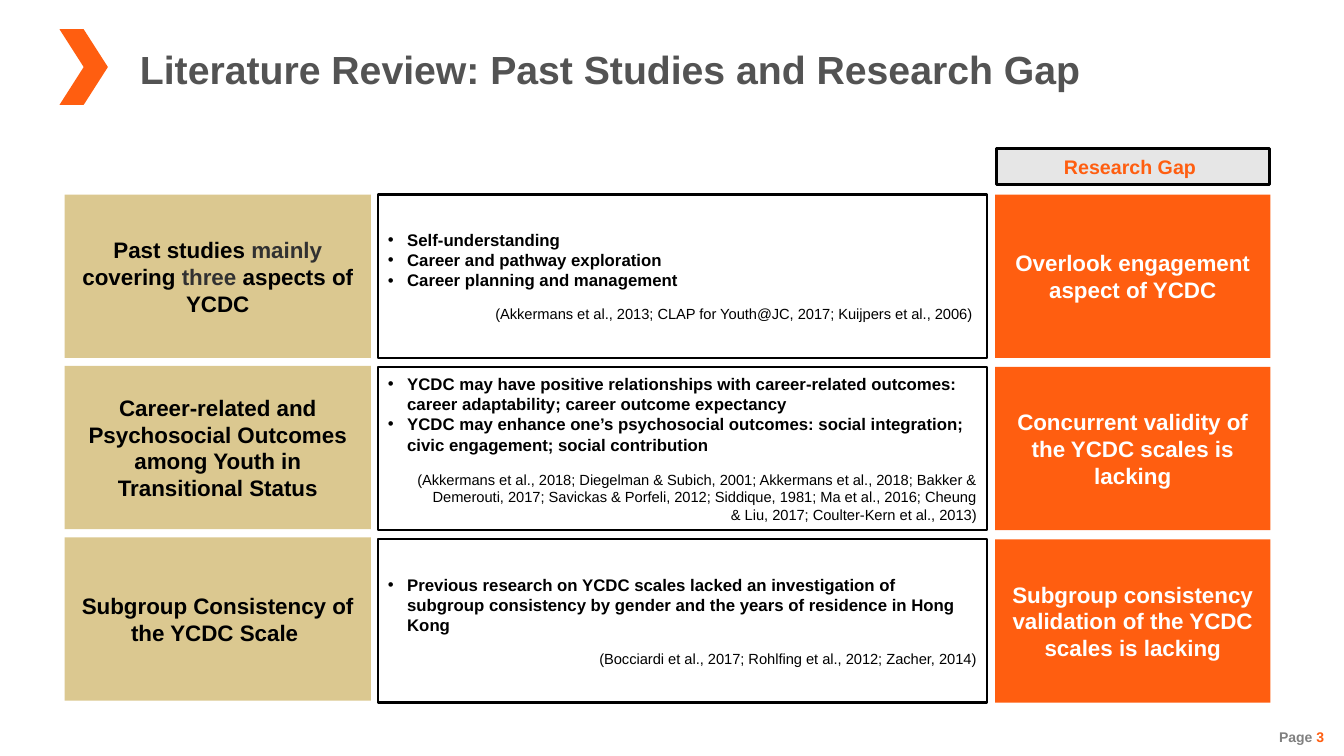
from lxml import etree
from pptx import Presentation
from pptx.dml.color import RGBColor
from pptx.enum.shapes import MSO_SHAPE
from pptx.enum.text import MSO_ANCHOR, PP_ALIGN
from pptx.oxml.ns import qn
from pptx.util import Inches, Pt

LEFT, CENTER, RIGHT = PP_ALIGN.LEFT, PP_ALIGN.CENTER, PP_ALIGN.RIGHT
MIDDLE = MSO_ANCHOR.MIDDLE
RECTANGLE, CHEVRON = MSO_SHAPE.RECTANGLE, MSO_SHAPE.CHEVRON

COLORS = {
    "orange": "FF5E10", "tan": "DBC890", "light": "E6E6E6", "white": "FFFFFF",
    "black": "000000", "charcoal": "313131", "title": "535353", "gray": "808080",
}


def add_text(box, text, size=12, color="black", bold=True, align=LEFT,
             before=0, indent=0, hanging=0, bullet=False):
    """Add a paragraph; text is a string or a list of (text, color) spans."""
    frame = box.text_frame
    para = frame.paragraphs[0]
    if para.runs:
        para = frame.add_paragraph()
        para.space_before = Pt(before)
    para.alignment = align
    properties = para._p.get_or_add_pPr()
    properties.set("marL", str(Inches(indent)))
    properties.set("indent", str(-Inches(hanging)))
    if bullet:
        etree.SubElement(properties, qn("a:buFont"), typeface="Arial")
        etree.SubElement(properties, qn("a:buChar"), char="•")
    spans = [(text, color)] if isinstance(text, str) else text
    for words, span_color in spans:
        span = para.add_run()
        span.text = words
        span.font.name = "Arial"
        span.font.size = Pt(size)
        span.font.bold = bold
        span.font.color.rgb = RGBColor.from_string(COLORS[span_color])


def add_box(left, top, width, height, fill=None, line=None, kind=RECTANGLE):
    """Add a preset shape with even insets and middle-anchored text."""
    box = page.shapes.add_shape(
        kind, Inches(left), Inches(top), Inches(width), Inches(height))
    box.shadow.inherit = False
    if fill:
        box.fill.solid()
        box.fill.fore_color.rgb = RGBColor.from_string(COLORS[fill])
    else:
        box.fill.background()
    if line:
        box.line.color.rgb = RGBColor.from_string(COLORS["black"])
        box.line.width = Pt(line)
    else:
        box.line.fill.background()
    frame = box.text_frame
    frame.word_wrap = True
    frame.vertical_anchor = MIDDLE
    frame.margin_left = frame.margin_right = Inches(0.1)
    frame.margin_top = frame.margin_bottom = Inches(0.1)
    return box


deck = Presentation()
deck.slide_width, deck.slide_height = Inches(13.33), Inches(7.5)
page = deck.slides.add_slide(deck.slide_layouts[6])

# Title and page number
title = page.shapes.add_textbox(Inches(1.29), Inches(0.4), Inches(9.64), Inches(0.57))
title.text_frame.word_wrap = False
add_text(title, "Literature Review: Past Studies and Research Gap", size=28, color="title")
add_box(0.59, 0.29, 0.48, 0.75, fill="orange", kind=CHEVRON)

number = page.shapes.add_textbox(Inches(12.58), Inches(7.18), Inches(0.65), Inches(0.27))
number.text_frame.word_wrap = False
add_text(number, [("Page ", "gray"), ("3", "orange")], size=10, align=RIGHT)

# Rows: topic, findings, citation with its format, research gap
rows = [
    ([("Past studies ", "black"), ("mainly ", "charcoal"), ("covering", "black"),
      (" three ", "charcoal"), ("aspects of YCDC", "black")],
     ["Self-understanding",
      "Career and pathway exploration",
      "Career planning and management"],
     "(Akkermans et al., 2013; CLAP for Youth@JC, 2017; Kuijpers et al., 2006) ",
     {"before": 10.5},
     "Overlook engagement aspect of YCDC"),
    ("Career-related and Psychosocial Outcomes among Youth in Transitional Status",
     ["YCDC may have positive relationships with career-related outcomes: "
      "career adaptability; career outcome expectancy",
      "YCDC may enhance one’s psychosocial outcomes: social integration; "
      "civic engagement; social contribution"],
     "(Akkermans et al., 2018; Diegelman & Subich, 2001; Akkermans et al., 2018; "
     "Bakker & Demerouti, 2017; Savickas & Porfeli, 2012; Siddique, 1981; "
     "Ma et al., 2016; Cheung & Liu, 2017; Coulter-Kern et al., 2013)",
     {"before": 11.5, "indent": 0.31, "hanging": 0.31},
     "Concurrent validity of the YCDC scales is lacking"),
    ("Subgroup Consistency of the YCDC Scale ",
     ["Previous research on YCDC scales lacked an investigation of subgroup "
      "consistency by gender and the years of residence in Hong Kong"],
     "(Bocciardi et al., 2017; Rohlfing et al., 2012; Zacher, 2014)",
     {"before": 10.5, "indent": 1.37},
     "Subgroup consistency validation of the YCDC scales is lacking"),
]
first_top, row_pitch, row_height = 1.93, 1.71, 1.62

for index, (topic, findings, citation, citation_format, gap) in enumerate(rows):
    top = first_top + index * row_pitch

    topic_box = add_box(0.64, first_top + index * 1.7, 3.04, row_height, fill="tan")
    add_text(topic_box, topic, size=16, align=CENTER)

    findings_box = add_box(3.75, top, 6.04, row_height, line=1.5)
    for finding in findings:
        add_text(findings_box, finding, indent=0.19, hanging=0.19, bullet=True)
    add_text(findings_box, citation, size=10.5, bold=False, align=RIGHT, **citation_format)

    gap_box = add_box(9.87, top, 2.73, row_height, fill="orange")
    add_text(gap_box, gap, size=16, color="white", align=CENTER)

# Heading over the gap column
heading = add_box(9.88, 1.47, 2.71, 0.36, fill="light", line=2.25)
add_text(heading, "Research Gap ", size=14, color="orange", align=CENTER)

deck.save("out.pptx")
